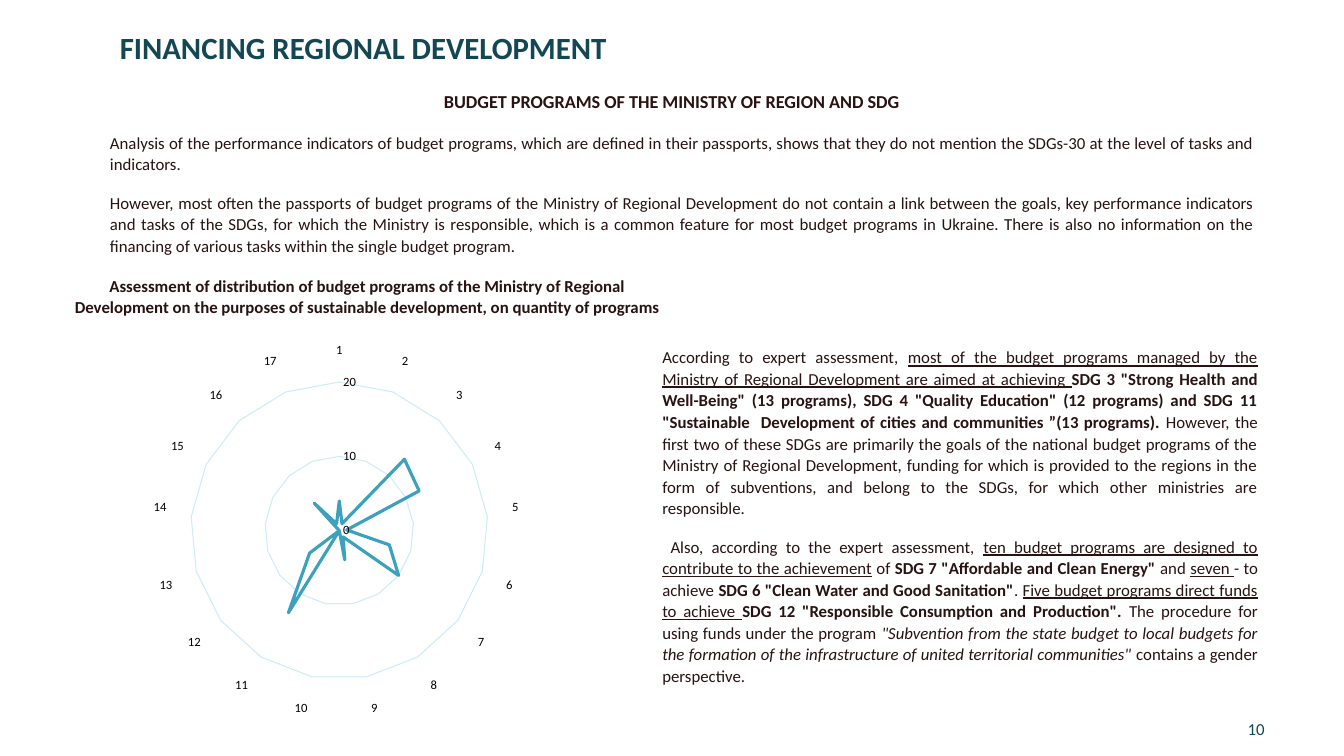
from dataclasses import dataclass

from pptx import Presentation
from pptx.chart.data import CategoryChartData
from pptx.dml.color import RGBColor
from pptx.enum.chart import XL_CHART_TYPE, XL_TICK_MARK
from pptx.enum.shapes import MSO_SHAPE
from pptx.enum.text import MSO_ANCHOR, PP_ALIGN
from pptx.util import Inches, Pt


@dataclass(frozen=True)
class Theme:
    font: str = "Calibri"
    heading: RGBColor = RGBColor.from_string("134753")
    body: RGBColor = RGBColor.from_string("281212")
    panel: RGBColor = RGBColor.from_string("FFFFFF")
    label: RGBColor = RGBColor.from_string("000000")
    grid: RGBColor = RGBColor.from_string("CDECF4")
    series: RGBColor = RGBColor.from_string("3CA1BC")
    title_size: int = 22
    subtitle_size: int = 13
    body_size: int = 12
    chart_size: int = 10
    axis_size: int = 9
    body_leading: float = 1.07
    title_leading: float = 0.9


class SlideBuilder:
    """Draws on one slide; every area is (left, top, width, height) in percent."""

    def __init__(self, deck, theme):
        self.deck = deck
        self.theme = theme
        self.page = deck.slides.add_slide(deck.slide_layouts[6])

    def area(self, left, top, width, height):
        across, down = self.deck.slide_width / 100, self.deck.slide_height / 100
        return [round(length) for length in
                (left * across, top * down, width * across, height * down)]

    def style(self, span, size, color, marks=""):
        """Format a run; marks holds any of b (bold), i (italic), u (underline)."""
        font = span.font
        font.name, font.size = self.theme.font, Pt(size)
        font.color.rgb = color
        font.bold, font.italic, font.underline = (mark in marks for mark in "biu")

    def label(self, area, text, size, marks="", leading=1.0, anchor=MSO_ANCHOR.TOP):
        frame = self.page.shapes.add_textbox(*self.area(*area)).text_frame
        frame.word_wrap = True
        frame.vertical_anchor = anchor
        frame.text = text
        para = frame.paragraphs[0]
        para.line_spacing = leading
        self.style(para.runs[0], size, self.theme.heading, marks)

    def panel(self, area, paragraphs, size, align):
        """Add a white text panel; each paragraph is a list of (text, marks)."""
        box = self.page.shapes.add_shape(MSO_SHAPE.RECTANGLE, *self.area(*area))
        box.shadow.inherit = False
        box.fill.solid()
        box.fill.fore_color.rgb = self.theme.panel
        box.line.fill.background()
        frame = box.text_frame
        frame.word_wrap = True
        frame.vertical_anchor = MSO_ANCHOR.TOP
        frame.margin_left = frame.margin_top = frame.margin_right = frame.margin_bottom = 0
        for index, spans in enumerate(paragraphs):
            para = frame.add_paragraph() if index else frame.paragraphs[0]
            para.alignment = align
            para.line_spacing = self.theme.body_leading
            para.space_before = Pt(6 if index else 0)
            para.space_after = Pt(6)
            for text, marks in spans:
                span = para.add_run()
                span.text = text
                self.style(span, size, self.theme.body, marks)

    def chart_font(self, font, size):
        font.name, font.size = self.theme.font, Pt(size)
        font.color.rgb = self.theme.label

    def grid_line(self, line):
        line.color.rgb = self.theme.grid
        line.width = Pt(0.75)

    def radar(self, area, values):
        data = CategoryChartData()
        data.categories = [str(goal) for goal in range(1, len(values) + 1)]
        data.add_series("Series 1", values)
        chart = self.page.shapes.add_chart(
            XL_CHART_TYPE.RADAR, *self.area(*area), data).chart
        chart.has_legend = chart.has_title = False
        self.chart_font(chart.font, self.theme.chart_size)

        goals, counts = chart.category_axis, chart.value_axis
        for axis in (goals, counts):
            axis.major_tick_mark = axis.minor_tick_mark = XL_TICK_MARK.NONE
            self.chart_font(axis.tick_labels.font, self.theme.axis_size)
        goals.has_major_gridlines = False
        self.grid_line(goals.format.line)
        counts.minimum_scale, counts.maximum_scale, counts.major_unit = 0, 20, 10
        counts.has_major_gridlines = True
        self.grid_line(counts.major_gridlines.format.line)
        counts.format.line.fill.background()

        plot = chart.plots[0]
        plot.vary_by_categories = False
        line = plot.series[0].format.line
        line.color.rgb = self.theme.series
        line.width = Pt(2.25)


INTRODUCTION = [
    [("Analysis of the performance indicators of budget programs, which are defined in their "
      "passports, shows that they do not mention the SDGs-30 at the level of tasks and "
      "indicators.", "")],
    [("However, most often the passports of budget programs of the Ministry of Regional "
      "Development do not contain a link between the goals, key performance indicators and "
      "tasks of the SDGs, for which the Ministry is responsible, which is a common feature for "
      "most budget programs in Ukraine. There is also no information on the financing of "
      "various tasks within the single budget program.", "")],
]
FINDINGS = [
    [("According to expert assessment, ", ""),
     ("most of the budget programs managed by the Ministry of Regional Development are aimed "
      "at achieving ", "u"),
     ('SDG 3 "Strong Health and Well-Being" (13 programs), SDG 4 "Quality Education" '
      '(12 programs) and SDG 11 "Sustainable  Development of cities and communities '
      '”(13 programs). ', "b"),
     ("However, the first two of these SDGs are primarily the goals of the national budget "
      "programs of the Ministry of Regional Development, funding for which is provided to the "
      "regions in the form of subventions, and belong to the SDGs, for which other ministries "
      "are responsible.", "")],
    [(" Also, according to the expert assessment, ", ""),
     ("ten budget programs are designed to contribute to the achievement", "u"),
     (" of ", ""),
     ('SDG 7 "Affordable and Clean Energy" ', "b"),
     ("and ", ""),
     ("seven ", "u"),
     ("- to achieve ", ""),
     ('SDG 6 "Clean Water and Good Sanitation"', "b"),
     (". ", ""),
     ("Five budget programs direct funds to achieve ", "u"),
     ('SDG 12 "Responsible Consumption and Production". ', "b"),
     ("The procedure for using funds under the program ", ""),
     ('"Subvention from the state budget to local budgets for the formation of the '
      'infrastructure of united territorial communities" ', "i"),
     ("contains a gender perspective.", "")],
]
SUBTITLE = "BUDGET PROGRAMS OF THE MINISTRY OF REGION AND SDG"
CHART_TITLE = ("Assessment of distribution of budget programs of the Ministry of Regional "
               "Development on the purposes of sustainable development, on quantity of programs")
PROGRAMS_PER_GOAL = [4, 1, 13, 12, 1, 7, 10, 1, 4, 0, 13, 5, 0, 0, 0, 5, 1]


def main():
    deck = Presentation()
    deck.slide_width, deck.slide_height = Inches(13.33), Inches(7.5)
    theme = Theme()
    slide = SlideBuilder(deck, theme)

    slide.label((92.1, 93.73, 7.5, 5.33), "10", theme.body_size, anchor=MSO_ANCHOR.MIDDLE)
    slide.label((8.18, 3.73, 85, 7.47), "FINANCING REGIONAL DEVELOPMENT",
                theme.title_size, "b", theme.title_leading)
    slide.panel((8.18, 17.33, 85.2, 16.53), INTRODUCTION, theme.body_size, PP_ALIGN.JUSTIFY)
    slide.panel((32.18, 11.73, 35.55, 3.07), [[(SUBTITLE, "b")]],
                theme.subtitle_size, PP_ALIGN.CENTER)
    slide.panel((49.28, 45.73, 44.32, 45.47), FINDINGS, theme.body_size, PP_ALIGN.JUSTIFY)
    slide.panel((4.65, 36.27, 45.38, 5.6), [[(CHART_TITLE, "b")]],
                theme.body_size, PP_ALIGN.CENTER)
    slide.radar((2.32, 44.27, 45.38, 51.47), PROGRAMS_PER_GOAL)
    deck.save("out.pptx")


if __name__ == "__main__":
    main()
